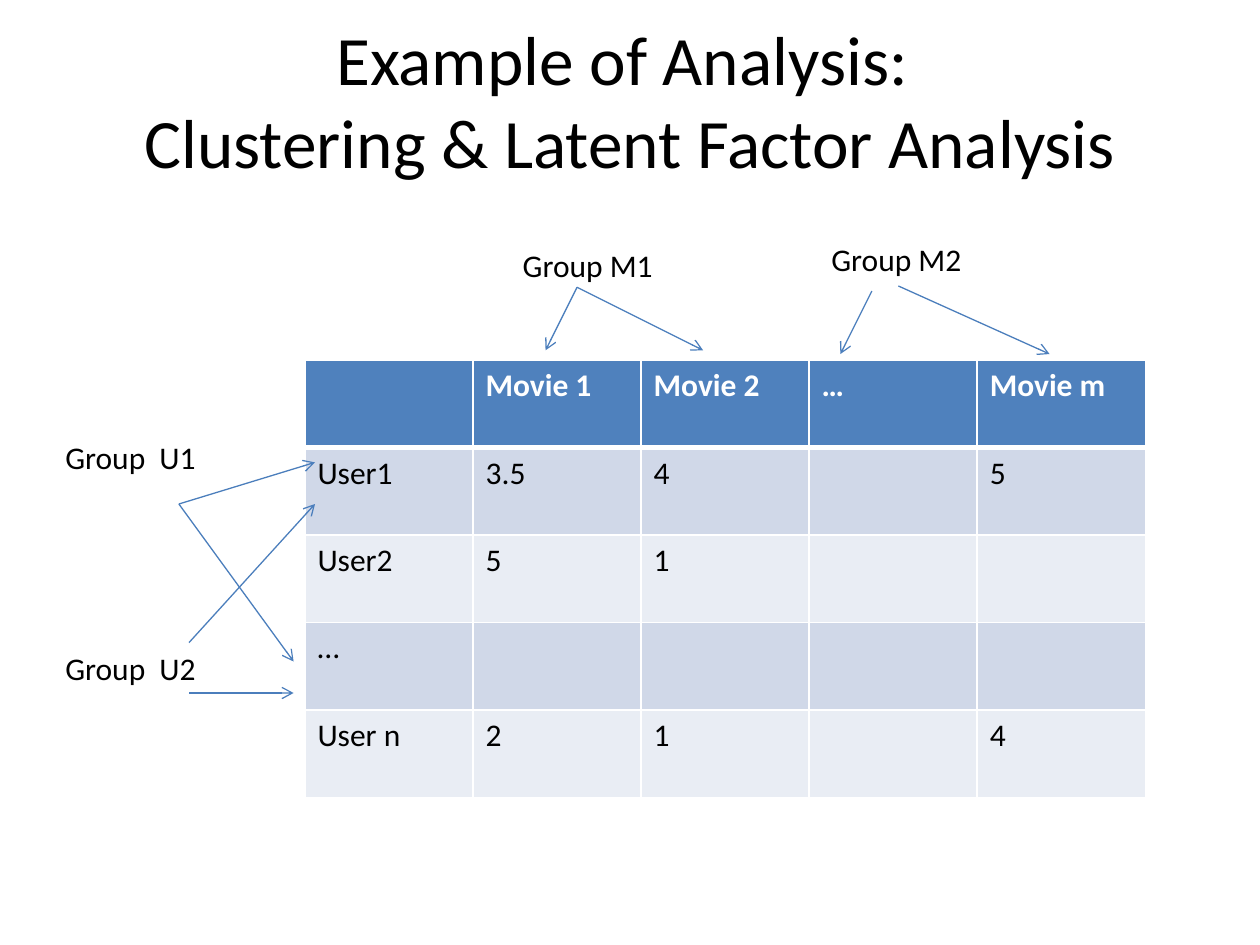
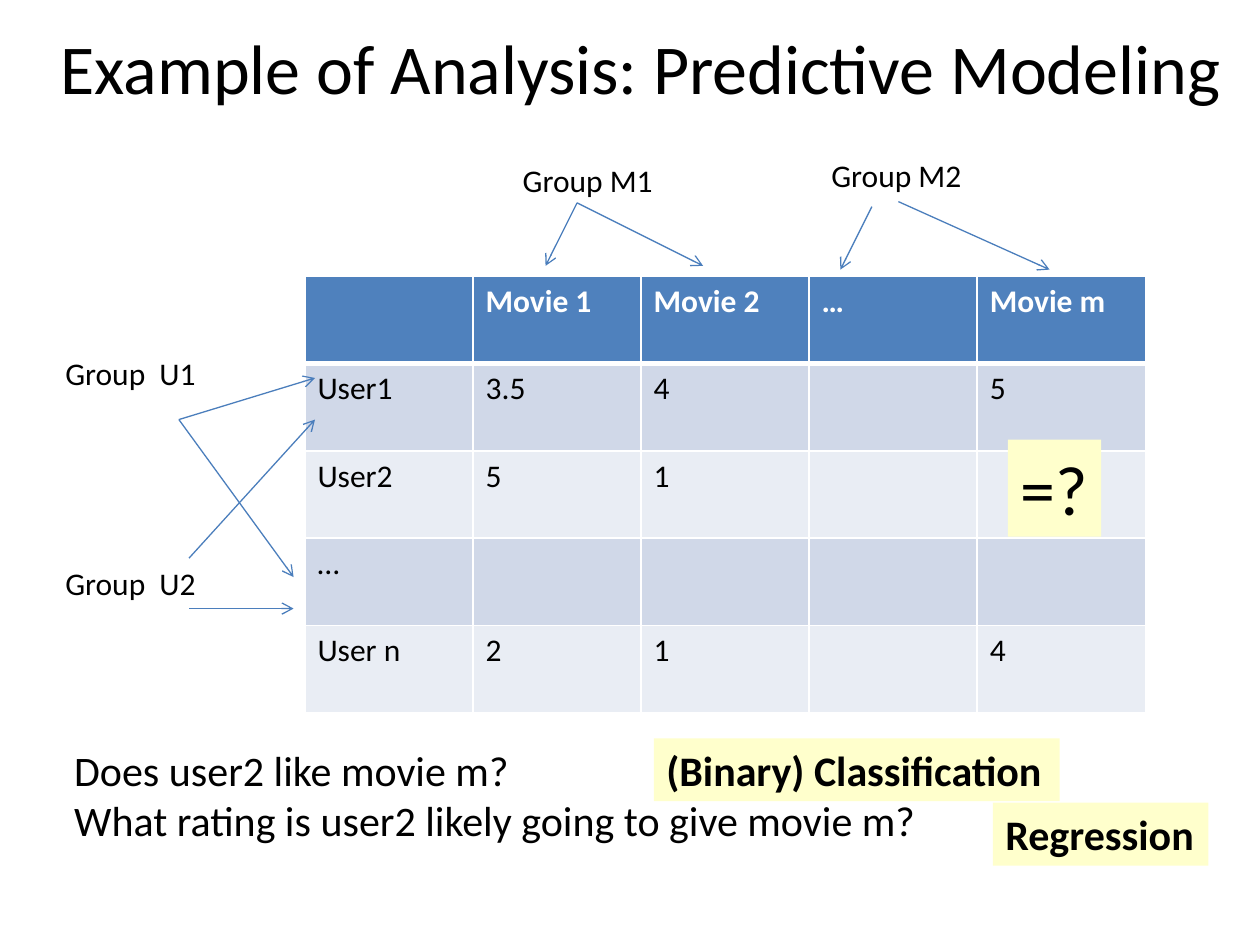
import pptx
import pptx.dml.color
import pptx.enum.text
import pptx.oxml
import pptx.oxml.ns
import pptx.util
from lxml import etree

Inches = pptx.util.Inches
Pt = pptx.util.Pt
RGBColor = pptx.dml.color.RGBColor
qn = pptx.oxml.ns.qn

FONT = "Calibri"
BLACK = RGBColor(0x00, 0x00, 0x00)
WHITE = RGBColor(0xFF, 0xFF, 0xFF)
HEADER_BLUE = RGBColor(0x4F, 0x81, 0xBD)
ARROW_BLUE = RGBColor(0x4B, 0x7E, 0xBC)
BAND_DARK = RGBColor(0xD0, 0xD8, 0xE8)
BAND_LIGHT = RGBColor(0xE9, 0xED, 0xF4)
HIGHLIGHT = RGBColor(0xFF, 0xFF, 0xCC)

TITLES = [
    (["Example of Analysis: ", "Clustering & Latent Factor Analysis"], 39.6, (0, 0.25, 10, 1.08)),
    (["Example of Analysis: Predictive Modeling"], 40, (-0.5, -0.01, 11.17, 1.08)),
]
TABLE_TOPS = [2.86, 2.19]
RATINGS = [
    ["", "Movie 1", "Movie 2", "…", "Movie m"],
    ["User1", "3.5", "4", "", "5"],
    ["User2", "5", "1", "", ""],
    ["…", "", "", "", ""],
    ["User n", "2", "1", "", "4"],
]
TABLE_LEFT, TABLE_WIDTH, TABLE_HEIGHT = 2.42, 6.67, 3.47

# Vertical values below are measured from the top of the table.
GROUP_LABELS = [
    ("Group M1", 4.05, -0.96),
    ("Group M2", 6.5, -1),
    ("Group  U1", 0.42, 0.57),
    ("Group  U2", 0.42, 2.24),
]
GROUP_ARROWS = [
    (4.58, -0.58, 4.33, -0.08),
    (4.58, -0.58, 5.58, -0.08),
    (7.13, -0.59, 8.33, -0.05),
    (6.92, -0.55, 6.67, -0.05),
    (1.42, 1.14, 2.5, 0.81),
    (1.42, 1.14, 2.33, 2.39),
    (1.5, 2.64, 2.33, 2.64),
    (1.5, 2.24, 2.5, 1.14),
]
QUESTIONS = ["Does user2 like movie m?", "What rating is user2 likely going to give movie m?"]
PREDICTION_BOXES = [
    (["=?"], (8, 3.49, 0.74, 0.77), 40, False, HIGHLIGHT),
    (QUESTIONS, (0.49, 5.86, 7.01, 0.91), 24, False, None),
    (["(Binary) Classification"], (5.19, 5.86, 3.22, 0.5), 24, True, HIGHLIGHT),
    (["Regression"], (7.88, 6.37, 1.71, 0.5), 24, True, HIGHLIGHT),
]


def add_span(para, text, size, color=BLACK, bold=False):
    span = para.add_run()
    span.text = text
    span.font.name = FONT
    span.font.size = Pt(size)
    span.font.bold = bold
    span.font.color.rgb = color


def add_label(page, lines, place, size, bold=False, fill=None):
    box = page.shapes.add_textbox(*[Inches(value) for value in place])
    frame = box.text_frame
    frame.word_wrap = False
    frame.auto_size = pptx.enum.text.MSO_AUTO_SIZE.SHAPE_TO_FIT_TEXT
    if fill is not None:
        box.fill.solid()
        box.fill.fore_color.rgb = fill
    for index, line in enumerate(lines):
        para = frame.add_paragraph() if index else frame.paragraphs[0]
        add_span(para, line, size, bold=bold)


deck = pptx.Presentation()
deck.slide_width = Inches(10)
deck.slide_height = Inches(7.5)

for (title_lines, title_size, title_place), table_top in zip(TITLES, TABLE_TOPS):
    page = deck.slides.add_slide(deck.slide_layouts[5])

    title = page.shapes.title
    title.left, title.top, title.width, title.height = [Inches(value) for value in title_place]
    title.text_frame.auto_size = pptx.enum.text.MSO_AUTO_SIZE.NONE
    title.text_frame.vertical_anchor = pptx.enum.text.MSO_ANCHOR.MIDDLE
    para = title.text_frame.paragraphs[0]
    para.alignment = pptx.enum.text.PP_ALIGN.CENTER
    for index, line in enumerate(title_lines):
        if index:
            para.add_line_break()
        add_span(para, line, title_size)

    table = page.shapes.add_table(
        len(RATINGS), len(RATINGS[0]), Inches(TABLE_LEFT), Inches(table_top),
        Inches(TABLE_WIDTH), Inches(TABLE_HEIGHT)).table
    for row, values in enumerate(RATINGS):
        for column, value in enumerate(values):
            cell = table.cell(row, column)
            cell.fill.solid()
            if row == 0:
                cell.fill.fore_color.rgb = HEADER_BLUE
            else:
                cell.fill.fore_color.rgb = BAND_DARK if row % 2 else BAND_LIGHT
            if value:
                color = BLACK if row else WHITE
                add_span(cell.text_frame.paragraphs[0], value, 18, color, row == 0)
            properties = cell._tc.get_or_add_tcPr()
            for position, side in enumerate(["lnL", "lnR", "lnT", "lnB"]):
                thick = (row, side) in [(0, "lnB"), (1, "lnT")]
                border = etree.Element(qn("a:" + side), w=str(Pt(3 if thick else 1)))
                paint = etree.SubElement(border, qn("a:solidFill"))
                etree.SubElement(paint, qn("a:srgbClr"), val=str(WHITE))
                properties.insert(position, border)

    for x1, y1, x2, y2 in GROUP_ARROWS:
        arrow = page.shapes.add_connector(
            pptx.enum.shapes.MSO_CONNECTOR.STRAIGHT,
            Inches(x1), Inches(table_top + y1), Inches(x2), Inches(table_top + y2))
        arrow.line.color.rgb = ARROW_BLUE
        arrow.line.width = Pt(0.75)
        etree.SubElement(arrow.line._get_or_add_ln(), qn("a:tailEnd"), type="arrow")
        etree.SubElement(arrow._element.spPr, qn("a:effectLst"))

    for text, left, offset in GROUP_LABELS:
        add_label(page, [text], (left, table_top + offset, 1.25, 0.4), 18)

for lines, place, size, bold, fill in PREDICTION_BOXES:
    add_label(page, lines, place, size, bold, fill)

deck.save("out.pptx")
